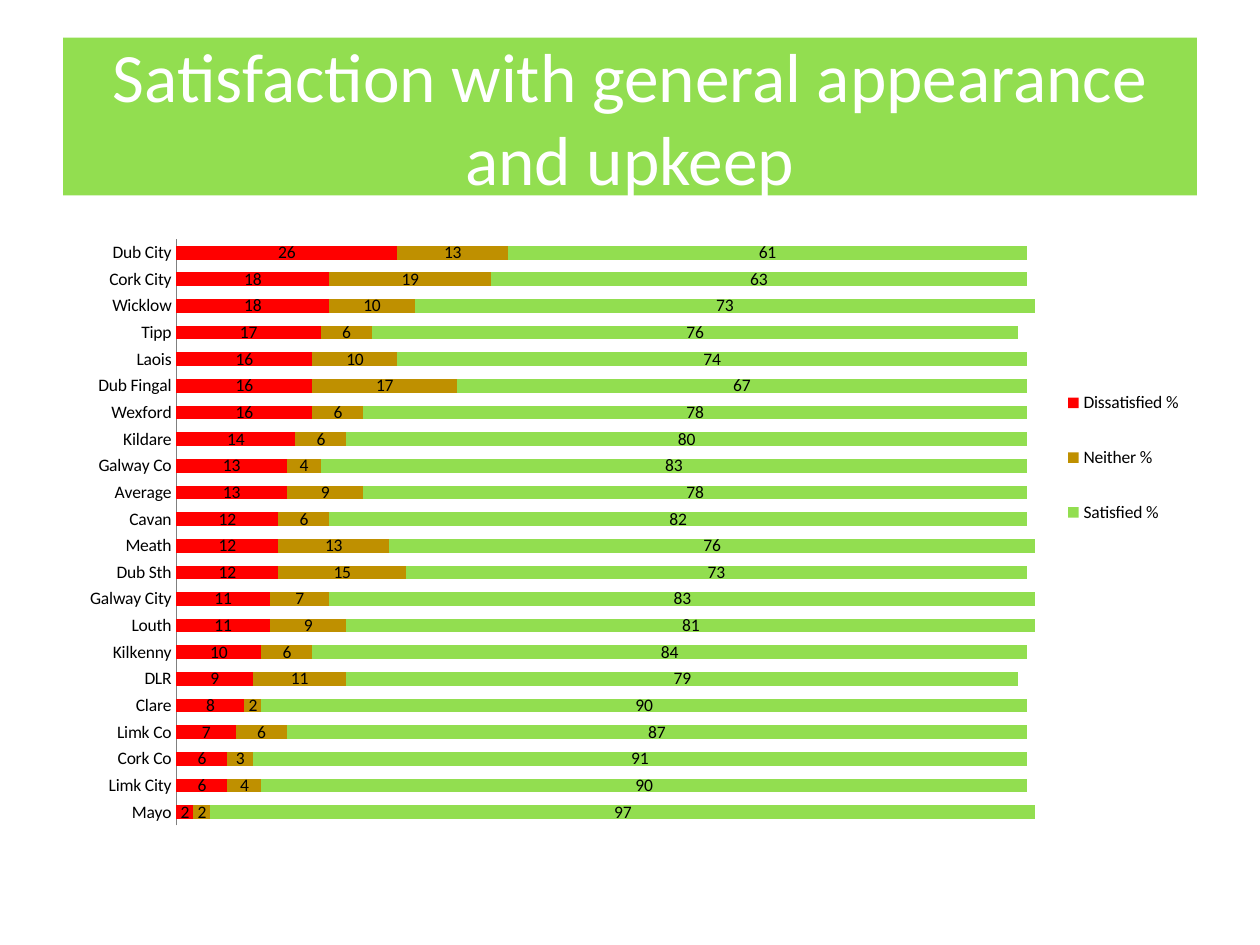
import pptx
import pptx.chart.data
import pptx.dml.color
import pptx.enum.chart
import pptx.enum.text
import pptx.util
import lxml.etree
from pptx.util import Cm

TITLE = "Satisfaction with general appearance and upkeep"
SERIES = ("Dissatisfied %", "Neither %", "Satisfied %")
COUNCILS = [
    ("Mayo", 2, 2, 97),
    ("Limk City", 6, 4, 90),
    ("Cork Co", 6, 3, 91),
    ("Limk Co", 7, 6, 87),
    ("Clare", 8, 2, 90),
    ("DLR", 9, 11, 79),
    ("Kilkenny", 10, 6, 84),
    ("Louth", 11, 9, 81),
    ("Galway City", 11, 7, 83),
    ("Dub Sth", 12, 15, 73),
    ("Meath", 12, 13, 76),
    ("Cavan", 12, 6, 82),
    ("Average", 13, 9, 78),
    ("Galway Co", 13, 4, 83),
    ("Kildare", 14, 6, 80),
    ("Wexford", 16, 6, 78),
    ("Dub Fingal", 16, 17, 67),
    ("Laois", 16, 10, 74),
    ("Tipp", 17, 6, 76),
    ("Wicklow", 18, 10, 73),
    ("Cork City", 18, 19, 63),
    ("Dub City", 26, 13, 61),
]
THEME = {
    "font": "Calibri",
    "title_size": 39.6,
    "chart_size": 10,
    "title_fill": "92DE50",
    "title_text": "FFFFFF",
    "text": "000000",
    "axis": "808080",
    "series": ("FF0000", "BF9000", "92DE50"),
}
MARGIN, CONTENT_WIDTH = Cm(1.27), Cm(22.86)
PLOT_BOX = (0.1, 0.03, 0.9, 0.94)
LEGEND_BOX = (0.88, 0.22, 0.11, 0.32)


def paint(fill, key_color):
    fill.solid()
    fill.fore_color.rgb = pptx.dml.color.RGBColor.from_string(key_color)


def style_font(font, size, color):
    font.name = THEME["font"]
    font.size = pptx.util.Pt(size)
    font.bold = False
    font.color.rgb = pptx.dml.color.RGBColor.from_string(color)


def chart_layout(box, inner=False):
    ns = "http://schemas.openxmlformats.org/drawingml/2006/chart"
    layout = lxml.etree.Element(f"{{{ns}}}layout", nsmap={"c": ns})
    manual = lxml.etree.SubElement(layout, f"{{{ns}}}manualLayout")
    settings = [("layoutTarget", "inner")] if inner else []
    settings += [("xMode", "edge"), ("yMode", "edge")]
    settings += zip("xywh", box)
    for tag, value in settings:
        lxml.etree.SubElement(manual, f"{{{ns}}}{tag}").set("val", str(value))
    return layout


def add_title(s):
    sp = s.shapes.title
    sp.left, sp.top, sp.width, sp.height = MARGIN, Cm(0.76), CONTENT_WIDTH, Cm(3.18)
    paint(sp.fill, THEME["title_fill"])
    tf = sp.text_frame
    tf.text = TITLE
    tf.word_wrap = True
    tf.auto_size = pptx.enum.text.MSO_AUTO_SIZE.NONE
    tf.vertical_anchor = pptx.enum.text.MSO_ANCHOR.MIDDLE
    p = tf.paragraphs[0]
    p.alignment = pptx.enum.text.PP_ALIGN.CENTER
    style_font(p.runs[0].font, THEME["title_size"], THEME["title_text"])


def add_satisfaction_chart(s):
    names, *columns = zip(*COUNCILS)
    data = pptx.chart.data.CategoryChartData(number_format="#,##0")
    data.categories = names
    for name, values in zip(SERIES, columns):
        data.add_series(name, values)
    chart = s.shapes.add_chart(
        pptx.enum.chart.XL_CHART_TYPE.BAR_STACKED,
        MARGIN, Cm(4.45), CONTENT_WIDTH, Cm(12.57), data).chart
    chart.has_title = False
    style_font(chart.font, THEME["chart_size"], THEME["text"])

    plot = chart.plots[0]
    plot.gap_width, plot.overlap = 95, 100
    plot.vary_by_categories = False
    for series, color in zip(plot.series, THEME["series"]):
        paint(series.format.fill, color)
        labels = series.data_labels
        labels.show_value = True
        labels.number_format = "#,##0"
        labels.number_format_is_linked = False
        labels.position = pptx.enum.chart.XL_LABEL_POSITION.CENTER

    no_ticks = pptx.enum.chart.XL_TICK_MARK.NONE
    axis = chart.category_axis
    axis.major_tick_mark = axis.minor_tick_mark = no_ticks
    paint(axis.format.line.fill, THEME["axis"])
    scale = chart.value_axis
    scale.minimum_scale, scale.maximum_scale = 0, 120
    scale.has_major_gridlines = False
    scale.visible = False

    chart.has_legend = True
    legend = chart.legend
    legend.position = pptx.enum.chart.XL_LEGEND_POSITION.RIGHT
    legend.include_in_layout = False
    style_font(legend.font, THEME["chart_size"], THEME["text"])

    area = chart.element.find(".//{*}plotArea")
    for old in area.findall("{*}layout"):
        area.remove(old)
    area.insert(0, chart_layout(PLOT_BOX, inner=True))
    key = chart.element.find(".//{*}legend")
    for old in key.findall("{*}layout"):
        key.remove(old)
    key.find("{*}legendPos").addnext(chart_layout(LEGEND_BOX))


def main():
    prs = pptx.Presentation()
    prs.slide_width, prs.slide_height = Cm(25.4), Cm(19.05)
    s = prs.slides.add_slide(prs.slide_layouts[5])
    add_title(s)
    add_satisfaction_chart(s)
    prs.save("out.pptx")


if __name__ == "__main__":
    main()
